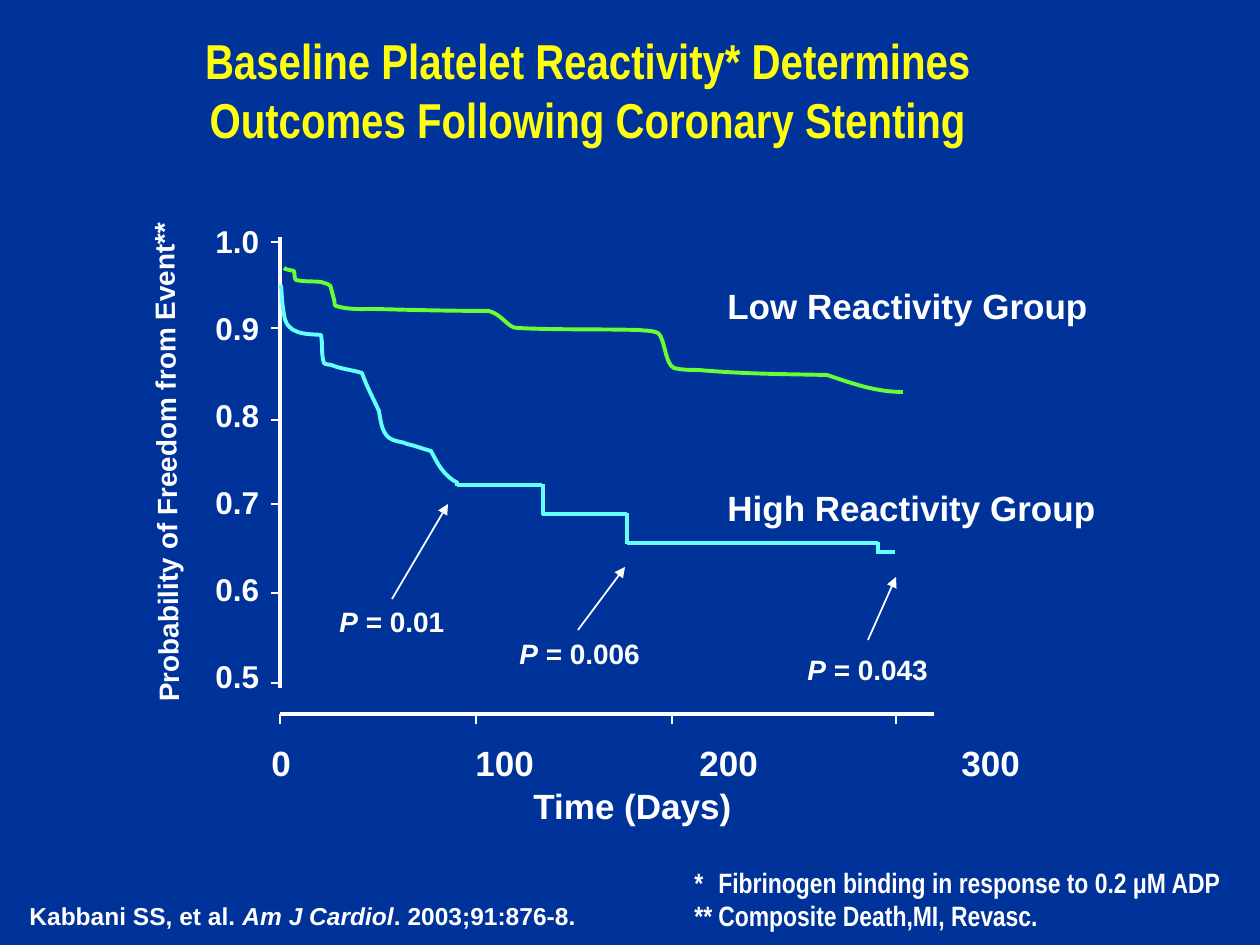
from lxml.etree import SubElement
from pptx import Presentation
from pptx.dml.color import RGBColor
from pptx.enum.shapes import MSO_CONNECTOR as Conn
from pptx.enum.text import MSO_ANCHOR as Anchor, PP_ALIGN as Align
from pptx.oxml.ns import qn
from pptx.util import Pt

SCALE = 914400 / 126  # EMU in one px
NAVY, YELLOW, WHITE = "003399", "FFFF0B", "FFFFFF"
GREEN, CYAN = "66FF33", "66FFFF"

# Curves: a start point, then two control points and an end point per row
LOW = [
    (84, 68),
    (86, 70), (91, 70), (94, 71),
    (95, 73), (94, 78), (96, 80),
    (104, 82), (112, 81), (121, 82),
    (133, 86), (129, 82), (134, 99),
    (135, 101), (134, 106), (136, 106),
    (149, 110), (162, 109), (174, 109),
    (212, 110), (250, 111), (289, 111),
    (303, 115), (308, 128), (317, 128),
    (357, 130), (399, 129), (439, 130),
    (445, 131), (451, 130), (458, 133),
    (465, 138), (465, 164), (474, 168),
    (482, 170), (490, 170), (498, 170),
    (545, 174), (579, 174), (627, 175),
    (654, 184), (676, 192), (703, 192),
]
HIGH = [
    (81, 85),
    (82, 95), (82, 105), (84, 114),
    (86, 135), (106, 134), (121, 135),
    (123, 145), (121, 154), (124, 163),
    (125, 165), (129, 164), (131, 165),
    (141, 169), (152, 170), (162, 173),
    (167, 187), (173, 198), (179, 211),
    (181, 222), (182, 236), (193, 240),
    (198, 242), (203, 242), (207, 244),
    (216, 246), (223, 249), (231, 251),
    (238, 264), (240, 269), (250, 278),
    (259, 285), (257, 280), (257, 286),
]
# Steps that carry the high group on to the right
STEPS = [
    (342, 314, 427, 314), (257, 285, 342, 285), (343, 284, 343, 315),
    (427, 343, 678, 343), (427, 313, 427, 344), (678, 342, 678, 352),
    (676, 352, 695, 352),
]


def px(n):
    return round(n * SCALE)


def rgb(code):
    return RGBColor.from_string(code)


def text(slide, box, paras, size, font="Arial", color=WHITE, wrap=False,
         align=Align.LEFT, anchor=Anchor.TOP, tabs=(), lead=None, gap=0):
    """Each paragraph is a list of runs: (words, italic)."""
    shape = slide.shapes.add_textbox(*map(px, box))
    frame = shape.text_frame
    frame.word_wrap, frame.vertical_anchor = wrap, anchor
    for i, runs in enumerate(paras):
        para = frame.paragraphs[0] if i == 0 else frame.add_paragraph()
        para.alignment = align
        if lead:
            para.line_spacing = lead
        if gap:
            para.space_after = Pt(gap)
        if tabs:
            stops = SubElement(para._p.get_or_add_pPr(), qn("a:tabLst"))
            for pos in tabs:
                SubElement(stops, qn("a:tab"), pos=str(px(pos)), algn="l")
        for words, slant in runs:
            run = para.add_run()
            run.text = words
            face = run.font
            face.name, face.size = font, Pt(size)
            face.bold, face.italic = True, slant
            face.color.rgb = rgb(color)
    return shape


def line(slide, x, y, ends, color=WHITE, width=2.25, head=False):
    x1, y1, x2, y2 = ends
    conn = slide.shapes.add_connector(
        Conn.STRAIGHT, px(x + x1), px(y + y1), px(x + x2), px(y + y2))
    conn.line.color.rgb, conn.line.width = rgb(color), Pt(width)
    if head:
        SubElement(conn.line._get_or_add_ln(), qn("a:tailEnd"), type="triangle")
    SubElement(conn._element.spPr, qn("a:effectLst"))


def curve(slide, x, y, pts, color):
    spots = [(px(x + a), px(y + b)) for a, b in pts]
    pen = slide.shapes.build_freeform(*spots[0])
    pen.add_line_segments(spots[1:], close=False)
    shape = pen.convert_to_shape()
    # Turn each three points into one cubic segment
    segs = list(shape._element.iter(qn("a:lnTo")))
    for i in range(0, len(segs), 3):
        cubic = SubElement(segs[i].getparent(), qn("a:cubicBezTo"))
        for seg in segs[i:i + 3]:
            cubic.append(seg[0])
            seg.getparent().remove(seg)
    shape.shadow.inherit = False
    shape.fill.background()
    shape.line.color.rgb, shape.line.width = rgb(color), Pt(2.25)


def title(slide, box):
    words = "Baseline Platelet Reactivity* Determines Outcomes Following Coronary Stenting"
    text(slide, box, [[(words, False)]], 28, "Arial Narrow", YELLOW,
         wrap=True, align=Align.CENTER, anchor=Anchor.MIDDLE)


def axes(slide, x, y):
    # Lines and ticks
    line(slide, x, y, (80, 37, 80, 488))
    line(slide, x, y, (80, 514, 734, 514))
    for v in (42, 128, 220, 304, 393, 483):
        line(slide, x, y, (71, v, 80, v), width=1)
    for h in (80, 276, 472, 696):
        line(slide, x, y, (h, 514, h, 524), width=1)
    # Scale labels
    marks = [[(f"{n / 10:.1f}", False)] for n in range(10, 4, -1)]
    text(slide, (x + 3, y + 10, 69, 495), marks, 18, lead=1.15, gap=24.9)
    text(slide, (x + 59, y + 535, 786, 55), [[("0\t100\t200\t300", False)]],
         20, wrap=True, tabs=(204, 428, 690))
    # Axis names
    text(slide, (x + 321, y + 578, 226, 55), [[("Time (Days)", False)]], 20)
    name = text(slide, (x - 290, y + 235, 512, 47),
                [[("Probability of Freedom from Event**", False)]], 16)
    name.rotation = 269.4


def plot(slide, x, y):
    axes(slide, x, y)
    # Survival curves
    curve(slide, x, y, LOW, GREEN)
    high = slide.shapes.add_group_shape()
    for ends in STEPS:
        line(high, x, y, ends, CYAN)
    curve(high, x, y, HIGH, CYAN)
    # Group names
    for name, top, wide in (("Low", 78, 388), ("High", 280, 397)):
        text(slide, (x + 515, y + top, wide, 55),
             [[(f"{name} Reactivity Group", False)]], 20)
    # P values and their arrows
    for val, left, top, wide, ends in (
            ("0.01", 127, 398, 132, (192, 399, 248, 304)),
            ("0.006", 307, 430, 147, (378, 430, 425, 367)),
            ("0.043", 595, 446, 147, (668, 440, 696, 377))):
        line(slide, x, y, ends, width=1, head=True)
        text(slide, (x + left, y + top, wide, 47),
             [[("P", True), (f" = {val}", False)]], 16)


def footer(slide, x, y):
    # Footnotes, then the citation
    notes = ("*\tFibrinogen binding in response to 0.2 μM ADP",
             "**\tComposite Death,MI, Revasc.")
    text(slide, (x + 665, y, 558, 81), [[(n, False)] for n in notes], 16,
         "Arial Narrow", wrap=True, tabs=(24,))
    text(slide, (x, y + 36, 573, 43),
         [[("Kabbani SS, et al. ", False), ("Am J Cardiol", True),
           (". 2003;91:876-8.", False)]], 14)


def main():
    deck = Presentation()
    deck.slide_width, deck.slide_height = px(1260), px(945)
    slide = deck.slides.add_slide(deck.slide_layouts[6])
    fill = slide.background.fill
    fill.solid()
    fill.fore_color.rgb = rgb(NAVY)
    title(slide, (111, 10, 953, 158))
    plot(slide, 200, 200)
    footer(slide, 17, 859)
    deck.save("out.pptx")


if __name__ == "__main__":
    main()
